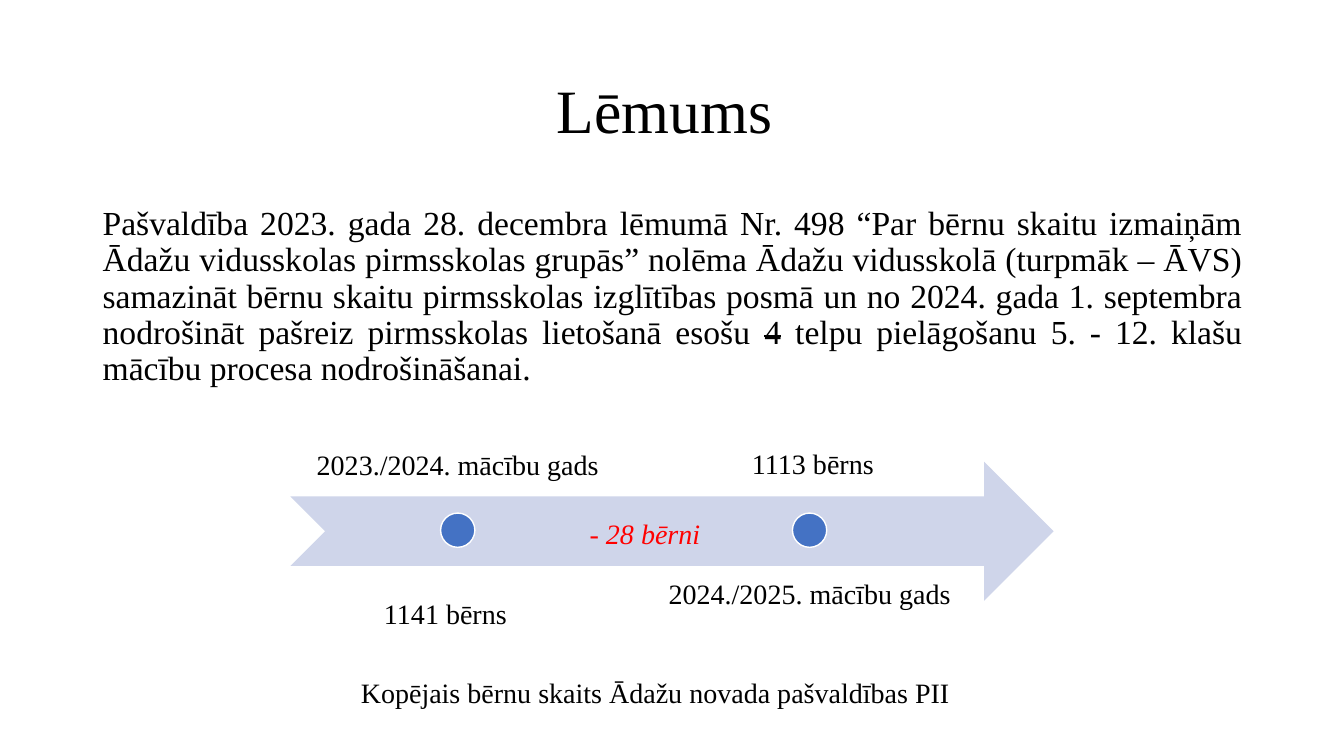
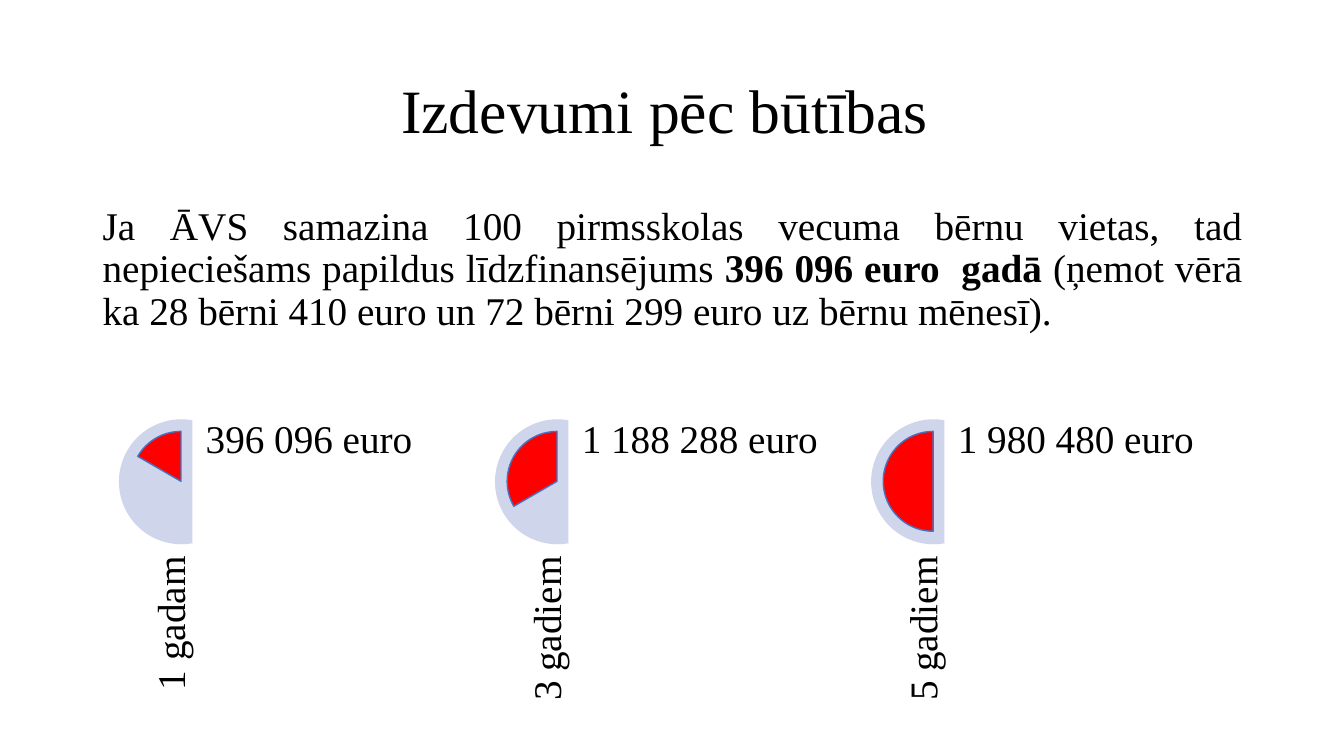
"""Build two slides on the preschool places decision and its costs."""
from pptx import Presentation
from pptx.dml.color import RGBColor
from pptx.enum.shapes import MSO_SHAPE
from pptx.enum.text import MSO_ANCHOR, PP_ALIGN
from pptx.util import Inches, Pt

ARROW = MSO_SHAPE.NOTCHED_RIGHT_ARROW
DOT = MSO_SHAPE.OVAL
CHORD = MSO_SHAPE.CHORD
PIE = MSO_SHAPE.PIE
TOP, MID, LOW = MSO_ANCHOR.TOP, MSO_ANCHOR.MIDDLE, MSO_ANCHOR.BOTTOM
LEFT, CENTER, RIGHT = PP_ALIGN.LEFT, PP_ALIGN.CENTER, PP_ALIGN.RIGHT
FULL = PP_ALIGN.JUSTIFY

FONT = "Times New Roman"
BLACK, WHITE, RED = "000000", "FFFFFF", "FF0000"
PALE, BLUE = "CFD5EA", "4472C4"
PAD = (0.1, 0.05)


def paint(color, tone):
    """Set a colour format from a hex string."""
    color.rgb = RGBColor.from_string(tone)


def write(slide, text, box, size=20, tone=BLACK, align=LEFT, anchor=TOP,
          pad=PAD, lead=0.9, before=0, italic=False, turn=0):
    """Add a text box; text is a string or a list of (words, style) runs."""
    shape = slide.shapes.add_textbox(*map(Inches, box))
    shape.rotation = turn
    frame = shape.text_frame
    frame.word_wrap = True
    frame.vertical_anchor = anchor
    frame.margin_left = frame.margin_right = Inches(pad[0])
    frame.margin_top = frame.margin_bottom = Inches(pad[1])
    para = frame.paragraphs[0]
    para.alignment, para.line_spacing = align, lead
    para.space_before = Pt(before)
    for words, style in [(text, "")] if isinstance(text, str) else text:
        run = para.add_run()
        run.text = words
        font = run.font
        font.name, font.size = FONT, Pt(size)
        font.italic, font.bold = italic, style == "bold"
        paint(font.color, tone)
        if style == "strike":
            run._r.get_or_add_rPr().set("strike", "sngStrike")


def draw(slide, kind, box, fill, line=None, turns=()):
    """Add a filled preset shape with an optional outline."""
    shape = slide.shapes.add_shape(kind, *map(Inches, box))
    shape.shadow.inherit = False
    shape.fill.solid()
    paint(shape.fill.fore_color, fill)
    if line:
        paint(shape.line.color, line)
        shape.line.width = Pt(1)
    else:
        shape.line.fill.background()
    for index, turn in enumerate(turns):
        shape.adjustments[index] = turn


def start(deck, title, runs, size):
    """Add a slide with its title and justified body text."""
    slide = deck.slides.add_slide(deck.slide_layouts[6])
    write(slide, title, (0.92, 0.4, 11.5, 1.45), size=44, align=CENTER,
          anchor=MID)
    write(slide, runs, (0.92, 2, 11.5, 2.2), size=size, align=FULL, before=10)
    return slide


def mark(slide, mid, year, top, anchor):
    """Put a dot on the arrow and a school year above or below it."""
    draw(slide, DOT, (mid - 0.17, 5.09, 0.34, 0.34), BLUE, WHITE)
    write(slide, year, (mid - 1.66, top, 3.32, 1.38), align=CENTER,
          anchor=anchor, pad=(0.16, 0.16))


def gauge(slide, left, years, term, cost):
    """Show a half dial filled by years, with its term and cost."""
    top = 4.16
    draw(slide, CHORD, (left, top, 1.24, 1.24), PALE, turns=(48, 168))
    draw(slide, PIE, (left + 0.12, top + 0.12, 0.99, 0.99), RED, BLUE,
         (144 - 18 * years, 162))
    write(slide, term, (left - 0.53, 6.05, 1.8, 0.74), size=28, align=RIGHT,
          anchor=LOW, pad=(0, 0), turn=270)
    write(slide, cost, (left + 0.86, top, 2.48, 0.6), size=28, pad=(0, 0))


def choice(deck):
    """Build the slide on the decision."""
    slide = start(deck, "Lēmums ", [
        ("Pašvaldība 2023. gada 28. decembra lēmumā Nr. 498 “Par bērnu skaitu "
         "izmaiņām Ādažu vidusskolas pirmsskolas grupās” nolēma Ādažu "
         "vidusskolā (turpmāk – ĀVS) samazināt bērnu skaitu pirmsskolas "
         "izglītības posmā un no 2024. gada 1. septembra nodrošināt pašreiz "
         "pirmsskolas lietošanā esošu ", ""),
        ("4", "strike"),
        (" telpu pielāgošanu 5. - 12. klašu mācību procesa "
         "nodrošināšanai. ", ""),
    ], 24)
    draw(slide, ARROW, (2.88, 4.58, 7.57, 1.38), PALE)
    mark(slide, 4.54, "2023./2024. mācību gads", 3.55, LOW)
    mark(slide, 8.03, "2024./2025. mācību gads", 5.61, TOP)
    for text, left, top, width, tone in (
            ("1141 bērns", 3.71, 5.87, 1.81, BLACK),
            ("1113 bērns", 7.36, 4.38, 1.81, BLACK),
            ("Kopējais bērnu skaits Ādažu novada pašvaldības PII",
             3.48, 6.65, 6.61, BLACK),
            ("- 28 bērni", 5.75, 5.07, 2.37, RED)):
        write(slide, text, (left, top, width, 0.44), tone=tone, lead=1,
              italic=tone == RED)


def costs(deck):
    """Build the slide on the costs."""
    slide = start(deck, "Izdevumi pēc būtības ", [
        ("Ja ĀVS samazina 100 pirmsskolas vecuma bērnu vietas, tad "
         "nepieciešams papildus līdzfinansējums ", ""),
        ("396 096 euro  gadā ", "bold"),
        ("(ņemot vērā ka 28 bērni 410 euro un 72 bērni 299 euro uz bērnu "
         "mēnesī). ", ""),
    ], 28)
    for index, (years, term, cost) in enumerate((
            (1, "1 gadam", "396 096 euro"),
            (3, "3 gadiem", "1 188 288 euro"),
            (5, "5 gadiem", "1 980 480 euro"))):
        gauge(slide, 1.18 + 3.73 * index, years, term, cost)


def main():
    """Build and save the deck."""
    deck = Presentation()
    deck.slide_width, deck.slide_height = Inches(13.33), Inches(7.5)
    choice(deck)
    costs(deck)
    deck.save("out.pptx")


if __name__ == "__main__":
    main()
